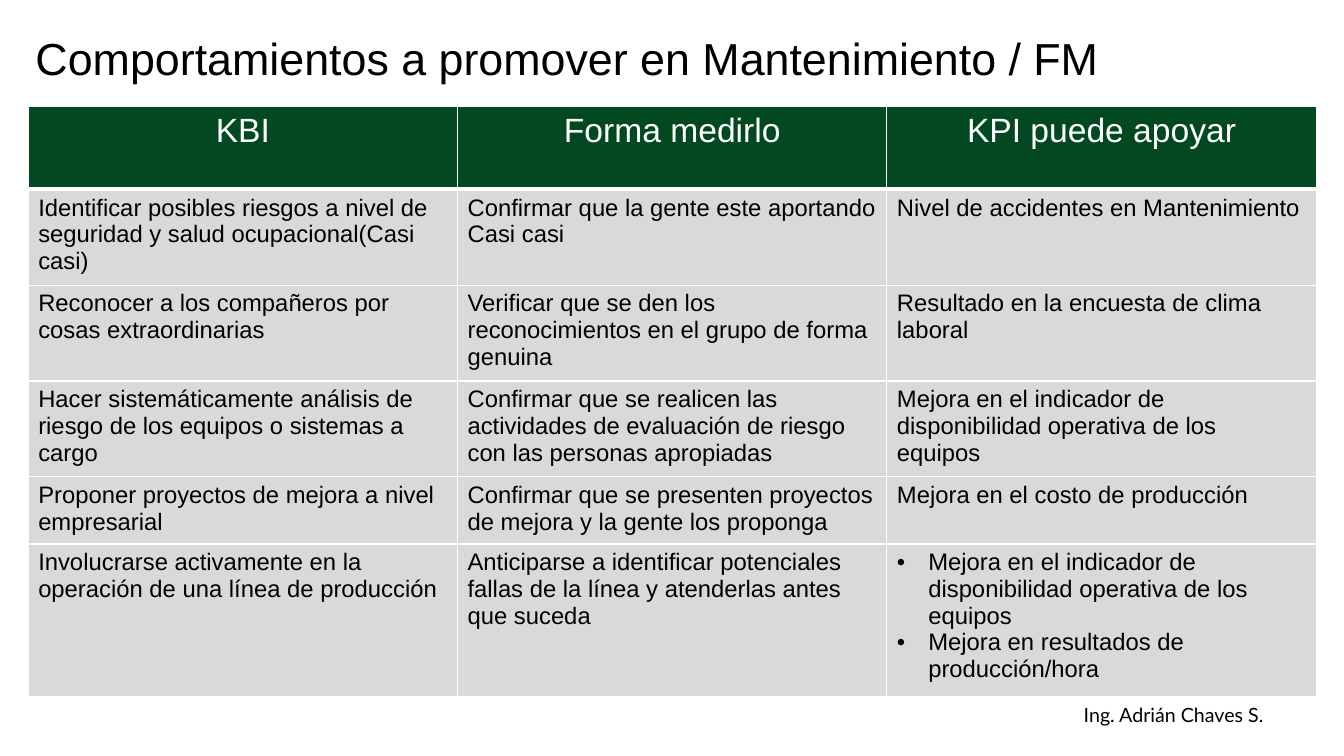
from lxml.etree import SubElement
from pptx import Presentation
from pptx.dml.color import RGBColor
from pptx.enum.text import MSO_ANCHOR as Anchor, MSO_AUTO_SIZE as AutoSize, PP_ALIGN as Align
from pptx.oxml.ns import qn
from pptx.util import Cm, Pt

GREEN, GREY, WHITE, BLACK = "024921", "D9D9D9", "FFFFFF", "000000"
HEADINGS = ["KBI", "Forma medirlo", "KPI puede apoyar"]
BEHAVIOURS = [
    ["Identificar posibles riesgos a nivel de seguridad y salud ocupacional(Casi casi)",
     "Confirmar que la gente este aportando Casi casi",
     "Nivel de accidentes en Mantenimiento"],
    ["Reconocer a los compañeros por cosas extraordinarias",
     "Verificar que se den los reconocimientos en el grupo de forma genuina",
     "Resultado en la encuesta de clima laboral"],
    ["Hacer sistemáticamente análisis de riesgo de los equipos o sistemas a cargo",
     "Confirmar que se realicen las actividades de evaluación de riesgo con las personas apropiadas",
     "Mejora en el indicador de disponibilidad operativa de los equipos"],
    ["Proponer proyectos de mejora a nivel empresarial",
     "Confirmar que se presenten proyectos de mejora y la gente los proponga",
     "Mejora en el costo de producción"],
    ["Involucrarse activamente en la operación de una línea de producción",
     "Anticiparse a identificar potenciales fallas de la línea y atenderlas antes que suceda",
     ["Mejora en el indicador de disponibilidad operativa de los equipos",
      "Mejora en resultados de producción/hora"]],
]
ROW_HEIGHTS = [2.08, 2.36, 2.36, 2.36, 1.68, 3.78]
COLUMN_WIDTH = 10.82


def color(value):
    return RGBColor.from_string(value)


def format_paragraph(para, size, tint, align=Align.LEFT, font="Arial"):
    para.alignment = align
    for span in para.runs:
        span.font.name = font
        span.font.size = Pt(size)
        span.font.color.rgb = color(tint)


def add_bullet(para):
    properties = para._p.get_or_add_pPr()
    properties.set("marL", str(Cm(0.79)))
    properties.set("indent", str(-Cm(0.79)))
    SubElement(properties, qn("a:buFont"), typeface="Arial")
    SubElement(properties, qn("a:buChar"), char="•")


def add_borders(cell, top, bottom):
    properties = cell._tc.get_or_add_tcPr()
    for side, points in (("L", 1), ("R", 1), ("T", top), ("B", bottom)):
        line = SubElement(properties, qn(f"a:ln{side}"), w=str(Pt(points)))
        fill = SubElement(line, qn("a:solidFill"))
        SubElement(fill, qn("a:srgbClr"), val=WHITE)


def fill_cell(cell, content, row):
    is_heading = row == 0
    add_borders(cell, 3 if row == 1 else 1, 3 if is_heading else 1)
    cell.fill.solid()
    cell.fill.fore_color.rgb = color(GREEN if is_heading else GREY)
    is_list = isinstance(content, list)
    cell.text_frame.text = "\n".join(content) if is_list else content
    for para in cell.text_frame.paragraphs:
        if is_list:
            add_bullet(para)
        if is_heading:
            format_paragraph(para, 24, WHITE, Align.CENTER)
        else:
            format_paragraph(para, 17, BLACK)


def add_behaviour_table(page):
    rows = [HEADINGS, *BEHAVIOURS]
    frame = page.shapes.add_table(len(rows), len(HEADINGS), Cm(0.71), Cm(2.69),
                                  Cm(COLUMN_WIDTH * len(HEADINGS)), Cm(sum(ROW_HEIGHTS)))
    table = frame.table
    for column in table.columns:
        column.width = Cm(COLUMN_WIDTH)
    for row, (contents, height) in enumerate(zip(rows, ROW_HEIGHTS)):
        table.rows[row].height = Cm(height)
        for column, content in enumerate(contents):
            fill_cell(table.cell(row, column), content, row)


def set_title(page, text):
    title = page.shapes.title
    title.left, title.top, title.width, title.height = Cm(0.64), Cm(0.64), Cm(27.56), Cm(1.63)
    frame = title.text_frame
    frame.text = text
    frame.word_wrap = True
    frame.auto_size = AutoSize.NONE
    frame.vertical_anchor = Anchor.MIDDLE
    format_paragraph(frame.paragraphs[0], 32, BLACK)


def add_author(page, text):
    box = page.shapes.add_textbox(Cm(25.63), Cm(17.58), Cm(7.9), Cm(0.86))
    box.text_frame.word_wrap = True
    box.text_frame.text = text
    format_paragraph(box.text_frame.paragraphs[0], 14, BLACK, Align.CENTER, "Lato")


def main():
    deck = Presentation()
    deck.slide_width, deck.slide_height = Cm(33.87), Cm(19.05)
    page = deck.slides.add_slide(deck.slide_layouts[5])
    add_author(page, "Ing. Adrián Chaves S.")
    add_behaviour_table(page)
    set_title(page, "Comportamientos a promover en Mantenimiento / FM")
    deck.save("out.pptx")


if __name__ == "__main__":
    main()
